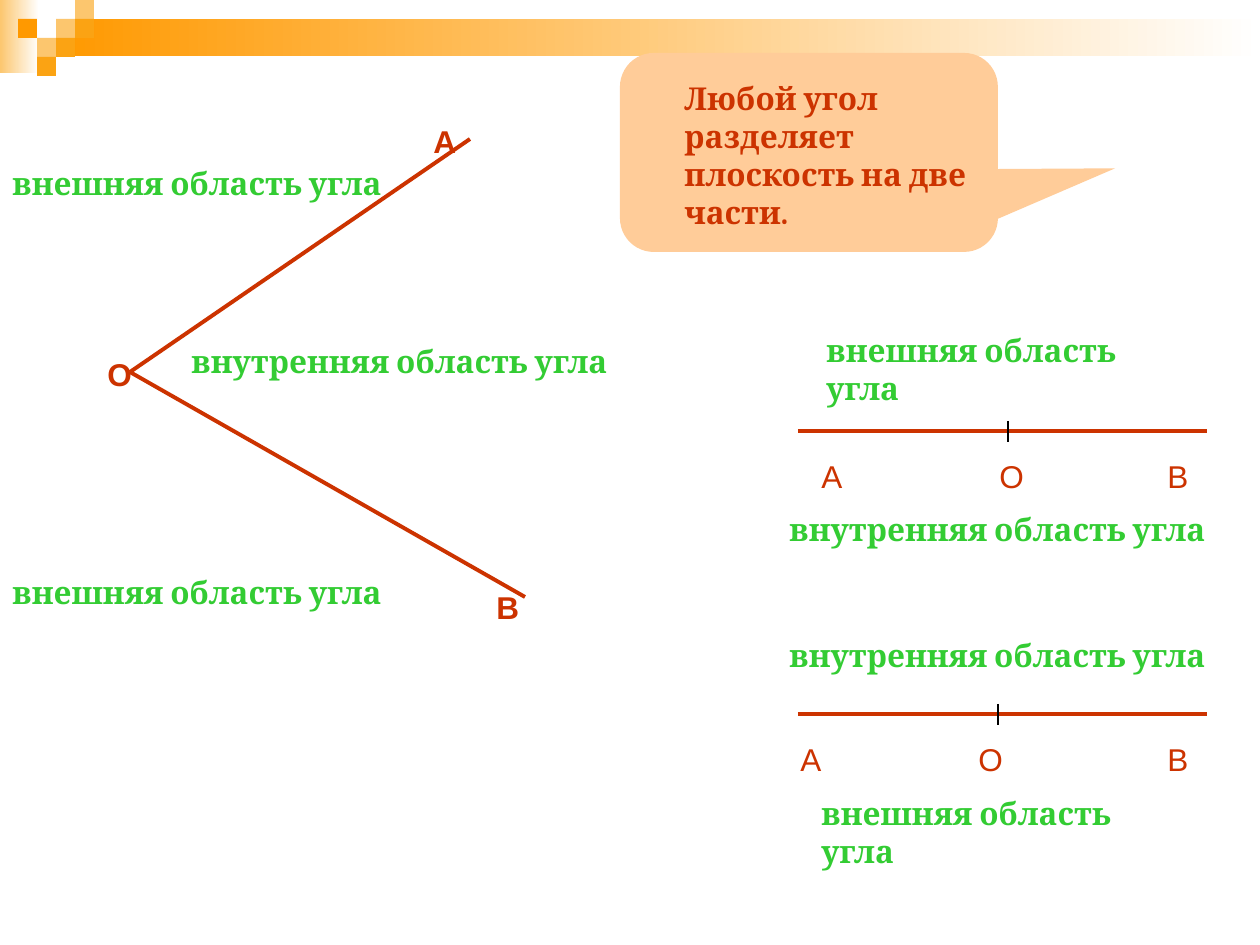
import dataclasses
import typing

import pptx
import pptx.dml.color
import pptx.enum.shapes
import pptx.oxml.ns
import pptx.util
from lxml import etree

RGB = pptx.dml.color.RGBColor
KIND = pptx.enum.shapes.MSO_SHAPE
SCALE = 914400 / 126

ORANGE = RGB(0xFF, 0x99, 0x00)
AMBER = RGB(0xFB, 0xA3, 0x13)
PALE = RGB(0xFC, 0xC6, 0x6E)
PEACH = RGB(0xFF, 0xCC, 0x99)
WHITE = RGB(0xFF, 0xFF, 0xFF)
BLACK = RGB(0, 0, 0)
RED = RGB(0xCC, 0x33, 0x00)
GREEN = RGB(0x33, 0xCC, 0x33)

INNER = "внутренняя область угла"
OUTER = "внешняя область угла"
CELL = 19


@dataclasses.dataclass
class Label:
    text: str
    x: int
    y: int
    w: int
    h: int = 50
    font: str = "Cambria"
    color: RGB = GREEN
    bold: bool = True


@dataclasses.dataclass
class Line:
    x1: int
    y1: int
    x2: int
    y2: int
    color: RGB = RED
    width: float = 2.25


@dataclasses.dataclass
class Ray:
    y: int
    tick: int
    names: list[tuple[str, int, int]]


def emu(*px: int) -> list[int]:
    return [round(n * SCALE) for n in px]


def draw_shape(shapes: typing.Any, kind: KIND, area: tuple[int, int, int, int],
               *colors: RGB) -> typing.Any:
    """Fill with one colour, or with a left-to-right gradient of two."""
    shape = shapes.add_shape(kind, *emu(*area))
    shape.shadow.inherit = False
    shape.line.fill.background()
    if len(colors) == 1:
        shape.fill.solid()
        shape.fill.fore_color.rgb = colors[0]
    else:
        shape.fill.gradient()
        shape.fill.gradient_angle = 0
        for stop, color in zip(shape.fill.gradient_stops, colors):
            stop.color.rgb = color
    return shape


def draw_line(shapes: typing.Any, line: Line) -> None:
    link = shapes.add_connector(pptx.enum.shapes.MSO_CONNECTOR.STRAIGHT,
                                *emu(line.x1, line.y1, line.x2, line.y2))
    link.line.color.rgb = line.color
    link.line.width = pptx.util.Pt(line.width)
    etree.SubElement(link._element.spPr, pptx.oxml.ns.qn("a:effectLst"))


def draw_label(shapes: typing.Any, label: Label) -> None:
    frame = shapes.add_textbox(*emu(label.x, label.y, label.w, label.h)).text_frame
    frame.word_wrap = True
    frame.text = label.text
    font = frame.paragraphs[0].runs[0].font
    font.name = label.font
    font.size = pptx.util.Pt(18)
    font.bold = label.bold
    font.color.rgb = label.color


def draw_ray(shapes: typing.Any, ray: Ray) -> None:
    """Straight angle: a line, a tick at the vertex and three names."""
    draw_line(shapes, Line(798, ray.y, 1207, ray.y))
    draw_line(shapes, Line(ray.tick, ray.y - 10, ray.tick, ray.y + 11, BLACK, 0.75))
    for name, x, w in ray.names:
        draw_label(shapes, Label(name, x, ray.y + 20, w, 50, "Arial", RED, False))


def main() -> None:
    deck = pptx.Presentation()
    deck.slide_width, deck.slide_height = emu(1260, 945)
    shapes = deck.slides.add_slide(deck.slide_layouts[6]).shapes

    # Header band and checker squares
    band = shapes.add_group_shape().shapes
    draw_shape(band, KIND.RECTANGLE, (0, 0, 39, 73), PALE, WHITE)
    draw_shape(band, KIND.RECTANGLE, (57, 19, 1203, 37), ORANGE, WHITE)
    for col, row, color in [(3, 1, PALE), (4, 0, PALE), (4, 1, AMBER), (2, 2, PALE),
                            (1, 1, ORANGE), (3, 2, AMBER), (2, 3, AMBER)]:
        area = (col * CELL - 1, row * CELL, CELL, CELL)
        draw_shape(band, KIND.RECTANGLE, area, color)

    # Angle AOB
    angle = shapes.add_group_shape().shapes
    for x, y in [(470, 139), (525, 597)]:
        draw_line(angle, Line(130, 372, x, y))
    for name, x, y, w in [("О", 95, 349, 49), ("А", 421, 116, 42), ("В", 484, 582, 63)]:
        draw_label(angle, Label(name, x, y, w, font="Arial", color=RED))

    # Straight angles
    for ray in [Ray(431, 1008, [("А", 809, 84), ("О", 987, 73), ("В", 1155, 63)]),
                Ray(714, 998, [("А", 788, 63), ("О", 966, 73), ("В", 1155, 73)])]:
        draw_ray(shapes, ray)

    # Region names
    for label in [Label(INNER, 179, 336, 451),
                  Label(OUTER, 0, 158, 451),
                  Label(OUTER, 0, 567, 451),
                  Label(OUTER, 814, 325, 378, 88),
                  Label(OUTER, 809, 788, 388, 88),
                  Label(INNER, 777, 504, 451),
                  Label(INNER, 777, 630, 451)]:
        draw_label(shapes, label)

    # Callout
    call = draw_shape(shapes, KIND.ROUNDED_RECTANGULAR_CALLOUT, (620, 53, 378, 199), PEACH)
    for i, value in enumerate([0.81, 0.08, 0.17]):
        call.adjustments[i] = value
    draw_label(shapes, Label("Любой угол разделяет плоскость на две части.",
                             672, 73, 315, 164, color=RED))

    deck.save("out.pptx")


if __name__ == "__main__":
    main()
